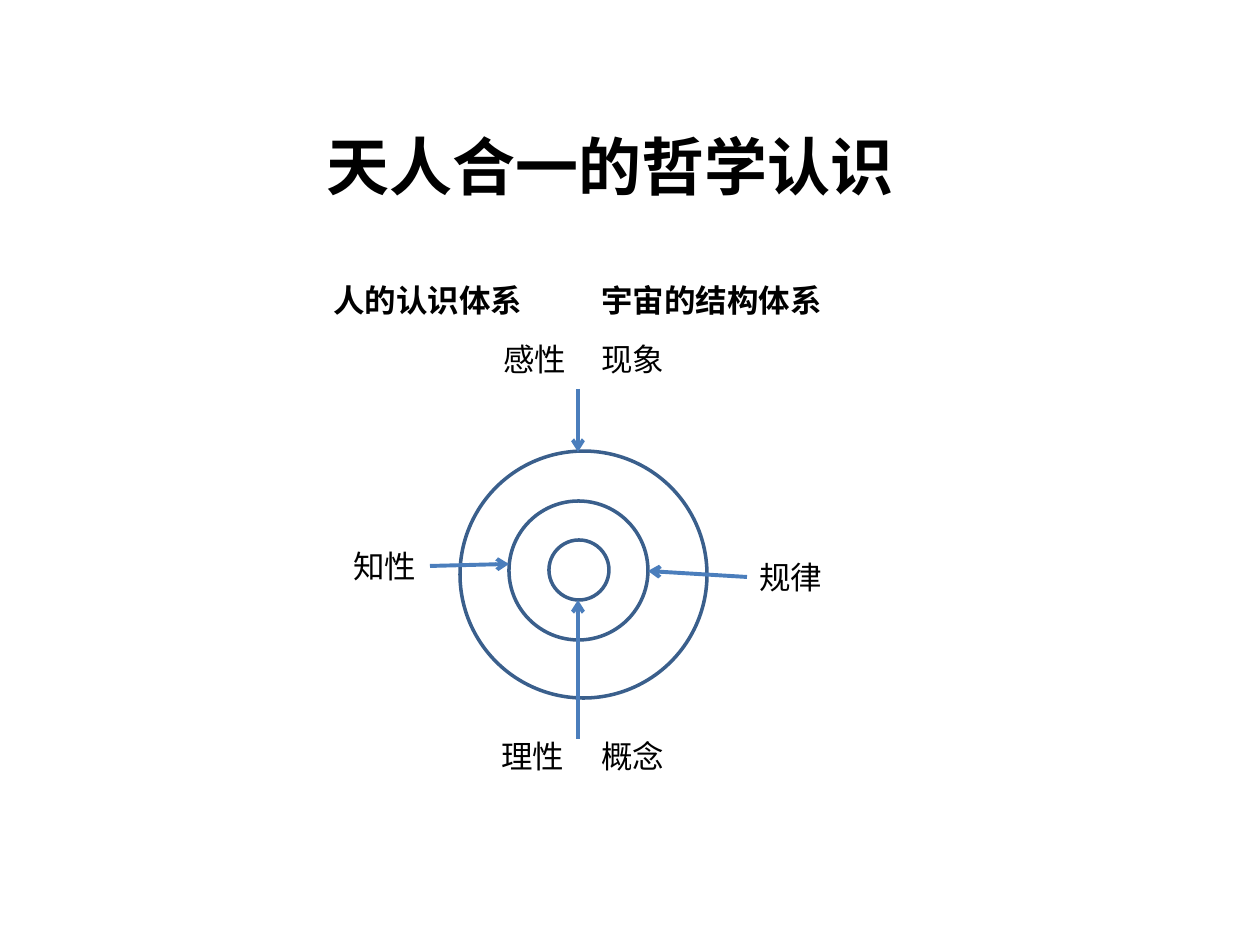
from lxml import etree
from pptx import Presentation
from pptx.dml.color import RGBColor
from pptx.enum.shapes import MSO_CONNECTOR, MSO_SHAPE
from pptx.enum.text import MSO_AUTO_SIZE, PP_ALIGN
from pptx.oxml.ns import qn
from pptx.util import Pt

PX = 914400 / 126
FONT = "Calibri"
BLACK, WHITE, RING, ARROW = "000000", "FFFFFF", "3A5F8C", "4B7EBC"
LABEL_W, LABEL_H = 89, 51

# left, top, diameter, fill
CIRCLES = [
    (549, 540, 60, WHITE),
    (509, 501, 139, None),
    (460, 451, 247, None),
]
# start and end of each arrow
ARROWS = [
    ((578, 389), (578, 452)),
    ((430, 566), (509, 564)),
    ((578, 739), (578, 600)),
    ((747, 577), (648, 571)),
]
# text, left, top
LABELS = [
    ("感性", 491, 334),
    ("现象", 589, 334),
    ("知性", 341, 541),
    ("规律", 747, 552),
    ("理性", 489, 731),
    ("概念", 589, 731),
]
# text, left, top, width
HEADINGS = [
    ("人的认识体系", 321, 275, 217),
    ("宇宙的结构体系", 589, 275, 249),
]
TITLE = ("天人合一的哲学认识", 213, 106, 794, 105)


def px(*values):
    return [round(v * PX) for v in values]


def color(hex_string):
    return RGBColor.from_string(hex_string)


def add_circle(shapes, left, top, size, fill):
    sp = shapes.add_shape(MSO_SHAPE.OVAL, *px(left, top, size, size))
    sp.shadow.inherit = False
    if fill:
        sp.fill.solid()
        sp.fill.fore_color.rgb = color(fill)
    else:
        sp.fill.background()
    sp.line.color.rgb = color(RING)
    sp.line.width = Pt(2)


def add_arrow(shapes, start, end):
    cxn = shapes.add_connector(MSO_CONNECTOR.STRAIGHT, *px(*start, *end))
    cxn.line.color.rgb = color(ARROW)
    cxn.line.width = Pt(2.25)
    ln = cxn.line._get_or_add_ln()
    etree.SubElement(ln, qn("a:tailEnd"), type="arrow")
    etree.SubElement(ln.getparent(), qn("a:effectLst"))


def add_text(shapes, text, left, top, width, height=LABEL_H, size=18, bold=False):
    """Add a one-line text box and return its paragraph."""
    tf = shapes.add_textbox(*px(left, top, width, height)).text_frame
    tf.word_wrap = True
    tf.auto_size = MSO_AUTO_SIZE.SHAPE_TO_FIT_TEXT
    p = tf.paragraphs[0]
    p.text = text
    p.font.name = FONT
    p.font.size = Pt(size)
    p.font.bold = bold
    p.font.color.rgb = color(BLACK)
    return p


def main():
    prs = Presentation()
    prs.slide_width, prs.slide_height = px(1260, 945)
    shapes = prs.slides.add_slide(prs.slide_layouts[6]).shapes

    for circle in CIRCLES:
        add_circle(shapes, *circle)
    for start, end in ARROWS:
        add_arrow(shapes, start, end)
    for text, left, top in LABELS:
        add_text(shapes, text, left, top, LABEL_W)
    for heading in HEADINGS:
        add_text(shapes, *heading, bold=True)
    title = add_text(shapes, *TITLE, size=36, bold=True)
    title.alignment = PP_ALIGN.CENTER
    title.line_spacing = 1.2

    prs.save("out.pptx")


if __name__ == "__main__":
    main()
